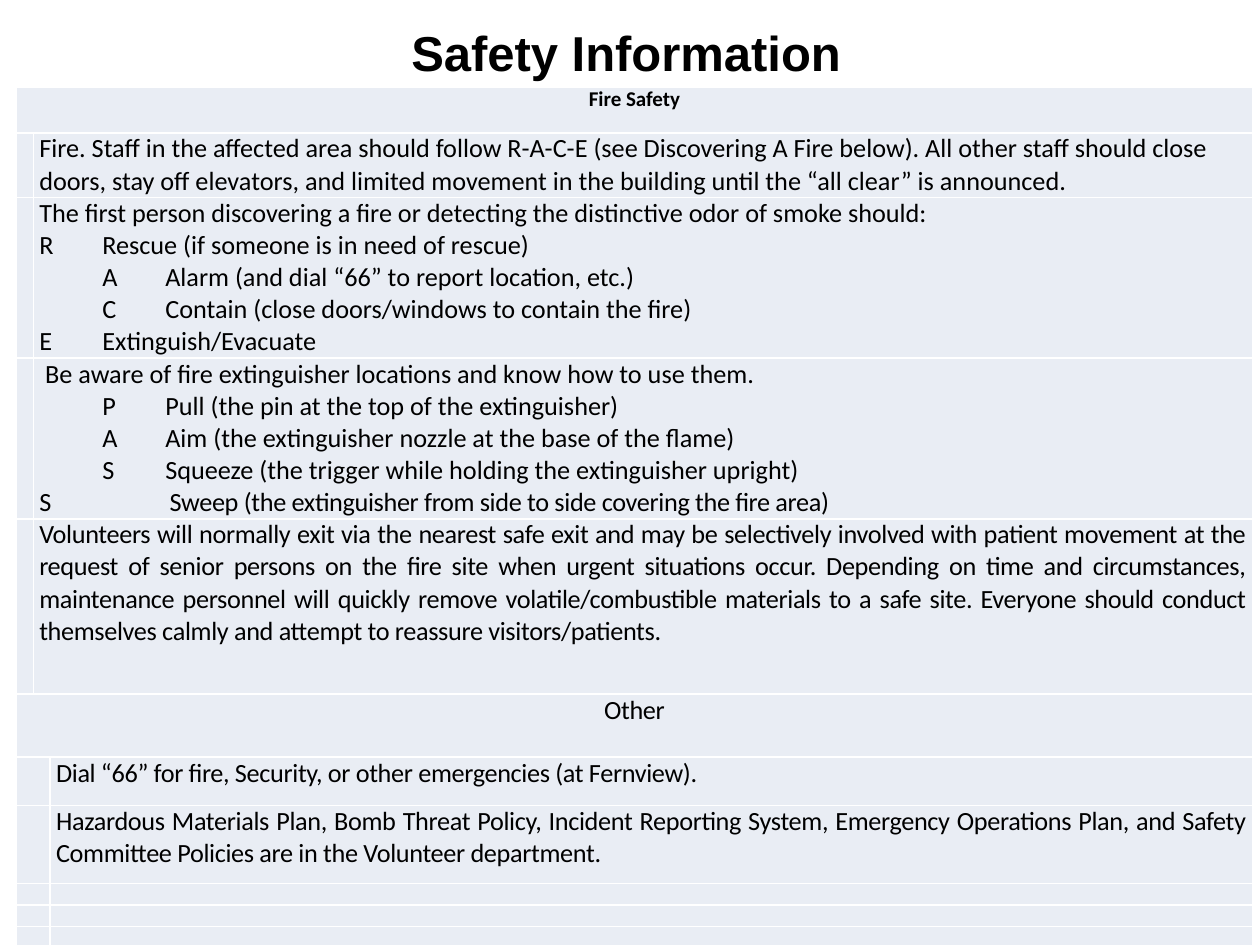
from dataclasses import dataclass

from lxml.etree import SubElement
from pptx import Presentation
from pptx.dml.color import RGBColor
from pptx.enum.text import MSO_ANCHOR, MSO_AUTO_SIZE, PP_ALIGN
from pptx.oxml.ns import qn
from pptx.util import Pt

LEFT, MID, JUST = PP_ALIGN.LEFT, PP_ALIGN.CENTER, PP_ALIGN.JUSTIFY
BLACK, PALE = "000000", "E9EDF4"
COLS = (9, 9, 687)


@dataclass
class Line:
    text: str
    align: PP_ALIGN = LEFT
    tight: bool = False  # letters drawn slightly together
    tab: float = 0       # own tab stop, in points


@dataclass
class Row:
    high: float
    first: int  # first column of the text
    lines: tuple[Line, ...] = ()
    size: float = 15
    bold: bool = False


ROWS = [
    Row(26.3, 0, (Line("Fire Safety", MID),), 12, True),
    Row(36.6, 1, (
        Line("Fire. Staff in the affected area should follow R-A-C-E (see "
             "Discovering A Fire below). All other staff should close doors, "
             "stay off elevators, and limited movement in the building until "
             "the “all clear” is announced."),)),
    Row(91.8, 1, (
        Line("The first person discovering a fire or detecting the "
             "distinctive odor of smoke should:"),
        Line("R\tRescue (if someone is in need of rescue)"),
        Line("\tA\tAlarm (and dial “66” to report location, etc.)"),
        Line("\tC\tContain (close doors/windows to contain the fire)"),
        Line("E\tExtinguish/Evacuate"))),
    Row(91.8, 1, (
        Line(" Be aware of fire extinguisher locations and know how to use "
             "them."),
        Line("\tP\tPull (the pin at the top of the extinguisher)"),
        Line("\tA\tAim (the extinguisher nozzle at the base of the flame)"),
        Line("\tS\tSqueeze (the trigger while holding the extinguisher "
             "upright)"),
        Line("S\tSweep (the extinguisher from side to side covering the fire "
             "area)", JUST, True, 74.5))),
    Row(100.2, 1, (
        Line("Volunteers will normally exit via the nearest safe exit and may "
             "be selectively involved with patient movement at the request of "
             "senior persons on the fire site when urgent situations occur. "
             "Depending on time and circumstances, maintenance personnel will "
             "quickly remove volatile/combustible materials to a safe site. "
             "Everyone should conduct themselves calmly and attempt to "
             "reassure visitors/patients.", JUST, True),)),
    Row(36, 0, (Line("Other", MID, True),)),
    Row(27.8, 2, (
        Line("Dial “66” for fire, Security, or other emergencies (at "
             "Fernview).", JUST, True),)),
    Row(44.5, 2, (
        Line("Hazardous Materials Plan, Bomb Threat Policy, Incident Reporting "
             "System, Emergency Operations Plan, and Safety Committee Policies "
             "are in the Volunteer department.", JUST, True),)),
    *[Row(12.2, 2)] * 3,
]


def paint(part, tone: str) -> None:
    """Give a fill or a font a solid colour."""
    if hasattr(part, "solid"):
        part.solid()
        part.fore_color.rgb = RGBColor.from_string(tone)
    else:
        part.color.rgb = RGBColor.from_string(tone)


def style(para, face: str, size: float, bold: bool, align: PP_ALIGN) -> None:
    para.alignment = align
    font = para.font
    font.name, font.size, font.bold = face, Pt(size), bold
    paint(font, BLACK)


def write(para, line: Line, row: Row) -> None:
    para.text = line.text
    style(para, "Calibri", row.size, row.bold, line.align)
    if line.tight:
        para.runs[0].font._element.set("spc", "-20")
    if line.tab:
        stops = para._p.pPr.makeelement(qn("a:tabLst"), {})
        SubElement(stops, qn("a:tab"), pos=str(Pt(line.tab)), algn="l")
        para._p.pPr.find(qn("a:defRPr")).addprevious(stops)


def fill_row(grid, num: int, row: Row) -> None:
    grid.rows[num].height = Pt(row.high)
    for cell in grid.rows[num].cells:
        paint(cell.fill, PALE)
        cell.margin_left = cell.margin_right = Pt(3.4)
        cell.margin_top = cell.margin_bottom = 0
        # Small end mark, so that empty cells keep their rows low
        SubElement(cell.text_frame.paragraphs[0]._p,
                   qn("a:endParaRPr"), sz="900")
    # Join the text columns, and the narrow ones before them
    if row.first < 2:
        grid.cell(num, row.first).merge(grid.cell(num, 2))
    else:
        grid.cell(num, 0).merge(grid.cell(num, 1))
    frame = grid.cell(num, row.first).text_frame
    for at, line in enumerate(row.lines):
        para = frame.add_paragraph() if at else frame.paragraphs[0]
        write(para, line, row)


def main() -> None:
    deck = Presentation()
    deck.slide_width, deck.slide_height = Pt(720), Pt(540)
    slide = deck.slides.add_slide(deck.slide_layouts[5])

    # Title
    title = slide.shapes.title
    title.left, title.top = Pt(108.5), Pt(12.5)
    title.width, title.height = Pt(498.5), Pt(34)
    frame = title.text_frame
    frame.text = "Safety Information"
    frame.auto_size = MSO_AUTO_SIZE.NONE
    frame.vertical_anchor = MSO_ANCHOR.MIDDLE
    frame.margin_left = frame.margin_right = 0
    frame.margin_top = frame.margin_bottom = 0
    style(frame.paragraphs[0], "Arial", 28, True, MID)

    # Safety table
    grid = slide.shapes.add_table(
        len(ROWS), len(COLS), Pt(9.5), Pt(49.7), Pt(sum(COLS)),
        Pt(sum(row.high for row in ROWS))).table
    grid.first_row = grid.horz_banding = False
    for col, wide in zip(grid.columns, COLS):
        col.width = Pt(wide)
    for num, row in enumerate(ROWS):
        fill_row(grid, num, row)

    deck.save("out.pptx")


if __name__ == "__main__":
    main()
